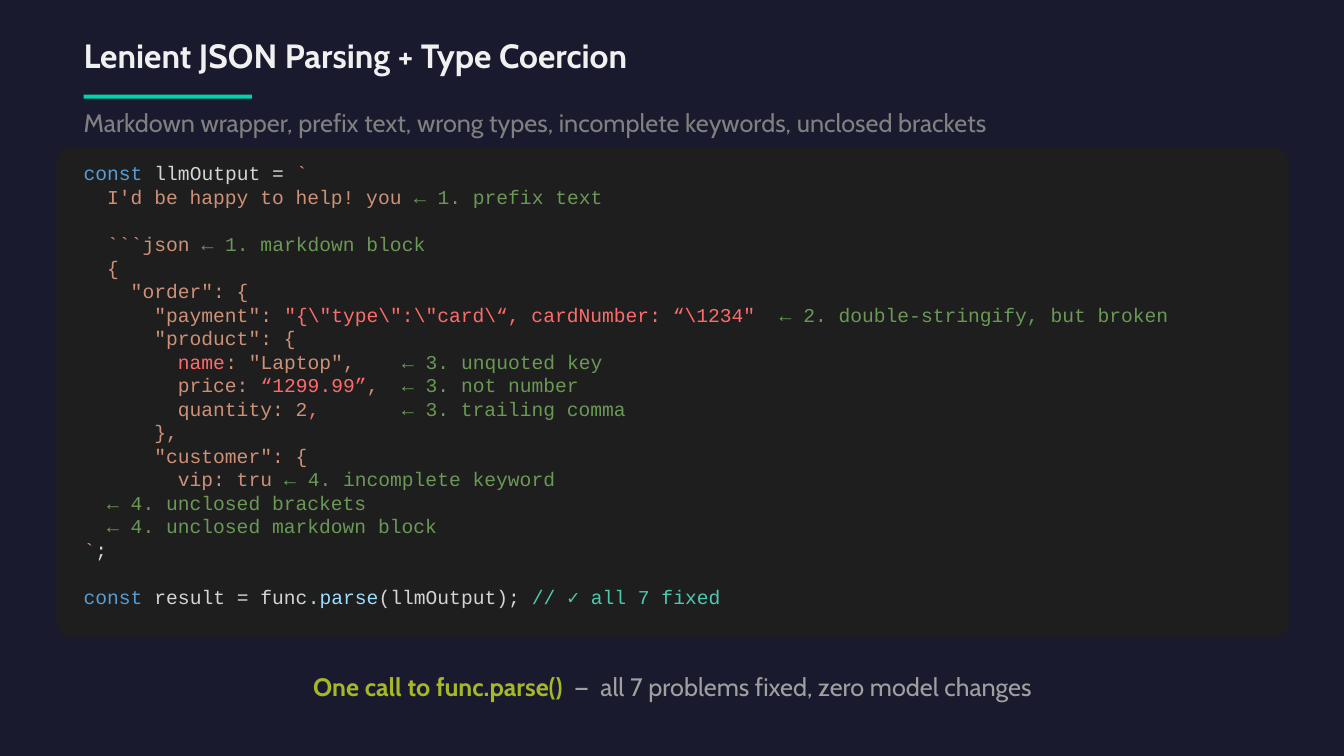
from pptx import Presentation
from pptx.dml.color import RGBColor
from pptx.enum.shapes import MSO_SHAPE as Shape
from pptx.enum.text import MSO_ANCHOR as Anchor, PP_ALIGN as Align
from pptx.util import Inches, Pt

COLORS = {
    "background": "1A1A2E", "panel": "1E1E1E", "accent": "00D4AA",
    "title": "F0F0F0", "subtitle": "808080", "claim": "A6B727", "detail": "A0A0A0",
    "keyword": "569CD6", "plain": "D4D4D4", "string": "CE9178", "note": "6A9955",
    "error": "FF6B6B", "method": "9CDCFE", "success": "4EC9B0",
}
LINE_HEIGHT = Pt(16.85)
CODE_BLOCKS = [
    [
        [("const ", "keyword"), ("llmOutput = ", "plain"), ("`", "string")],
        [("  I'd be happy to help! you ", "string"), ("← 1. prefix text", "note")],
    ],
    [
        [("  ```json", "string"), (" ← 1. markdown block", "note")],
        [("  {", "string")],
        [('    "order": {', "string")],
        [('      "payment": ', "string"),
         (r'"{\"type\":\"card\“, cardNumber: “\1234"', "error"),
         ("  ← 2. double-stringify, but broken", "note")],
        [('      "product": {', "string")],
        [("        name", "error"), (': "Laptop",', "string"),
         ("    ← 3. unquoted key", "note")],
        [("        price: ", "string"), ("“1299.99”", "error"), (",", "string"),
         ("  ← 3. not number", "note")],
        [("        quantity: 2", "string"), (",", "error"),
         ("       ← 3. trailing comma", "note")],
        [("      },", "string")],
        [('      "customer": {', "string")],
        [("        vip: tru", "string"), (" ← 4. incomplete keyword", "note")],
        [("  ← 4. unclosed brackets", "note")],
        [("  ← 4. unclosed markdown block", "note")],
        [("`", "string"), (";", "plain")],
    ],
    [
        [("const ", "keyword"), ("result = func", "plain"), (".parse", "method"),
         ("(llmOutput);", "plain"), (" // ✓ all 7 fixed", "success")],
    ],
]


def rgb(name):
    """Return the named colour."""
    return RGBColor.from_string(COLORS[name])


def add_block(slide, kind, left, top, width, height, color):
    """Add a filled shape without outline or shadow."""
    block = slide.shapes.add_shape(
        kind, Inches(left), Inches(top), Inches(width), Inches(height))
    block.shadow.inherit = False
    block.fill.solid()
    block.fill.fore_color.rgb = rgb(color)
    block.line.fill.background()
    return block


def add_frame(slide, left, top, width, height):
    """Add a wrapping text box without margins and return its frame."""
    frame = slide.shapes.add_textbox(
        Inches(left), Inches(top), Inches(width), Inches(height)).text_frame
    frame.word_wrap = True
    frame.margin_left = frame.margin_right = 0
    frame.margin_top = frame.margin_bottom = 0
    return frame


def write_line(paragraph, pieces, size, font="Cabin"):
    """Write coloured pieces of text into one paragraph."""
    paragraph.font.name = font
    paragraph.font.size = Pt(size)
    for text, color in pieces:
        run = paragraph.add_run()
        run.text = text
        run.font.color.rgb = rgb(color)


def add_heading(slide, top, height, text, size, color, bold=False):
    """Add a one-line heading at the left margin."""
    heading = add_frame(slide, 0.83, top, 11.67, height).paragraphs[0]
    write_line(heading, [(text, color)], size)
    heading.font.bold = bold


def add_code(slide):
    """Add the code listing with one empty line's height between blocks."""
    frame = add_frame(slide, 0.83, 1.6, 11.81, 4.58)
    for block_index, block in enumerate(CODE_BLOCKS):
        for line_index, pieces in enumerate(block):
            first = block_index == line_index == 0
            line = frame.paragraphs[0] if first else frame.add_paragraph()
            if block_index and not line_index:
                line.space_before = LINE_HEIGHT
            write_line(line, pieces, 14, "Courier New")


def add_takeaway(slide):
    """Add the centred closing statement."""
    frame = add_frame(slide, 1.39, 6.53, 10.56, 0.56)
    frame.vertical_anchor = Anchor.MIDDLE
    takeaway = frame.paragraphs[0]
    takeaway.alignment = Align.CENTER
    write_line(takeaway, [
        ("One call to func.parse()", "claim"),
        ("  —  all 7 problems fixed, zero model changes", "detail"),
    ], 18)
    takeaway.runs[0].font.bold = True


def main():
    """Build and save the slide."""
    deck = Presentation()
    deck.slide_width, deck.slide_height = Inches(13.33), Inches(7.5)
    slide = deck.slides.add_slide(deck.slide_layouts[6])
    background = slide.background.fill
    background.solid()
    background.fore_color.rgb = rgb("background")
    add_heading(slide, 0.35, 0.56, "Lenient JSON Parsing + Type Coercion",
                24, "title", bold=True)
    add_heading(slide, 1.06, 0.35,
                "Markdown wrapper, prefix text, wrong types, "
                "incomplete keywords, unclosed brackets", 18, "subtitle")
    panel = add_block(slide, Shape.ROUNDED_RECTANGLE, 0.56, 1.46, 12.22, 4.86, "panel")
    panel.adjustments[0] = 0.03
    add_code(slide)
    add_takeaway(slide)
    add_block(slide, Shape.RECTANGLE, 0.83, 0.94, 1.67, 0.04, "accent")
    deck.save("out.pptx")


if __name__ == "__main__":
    main()
